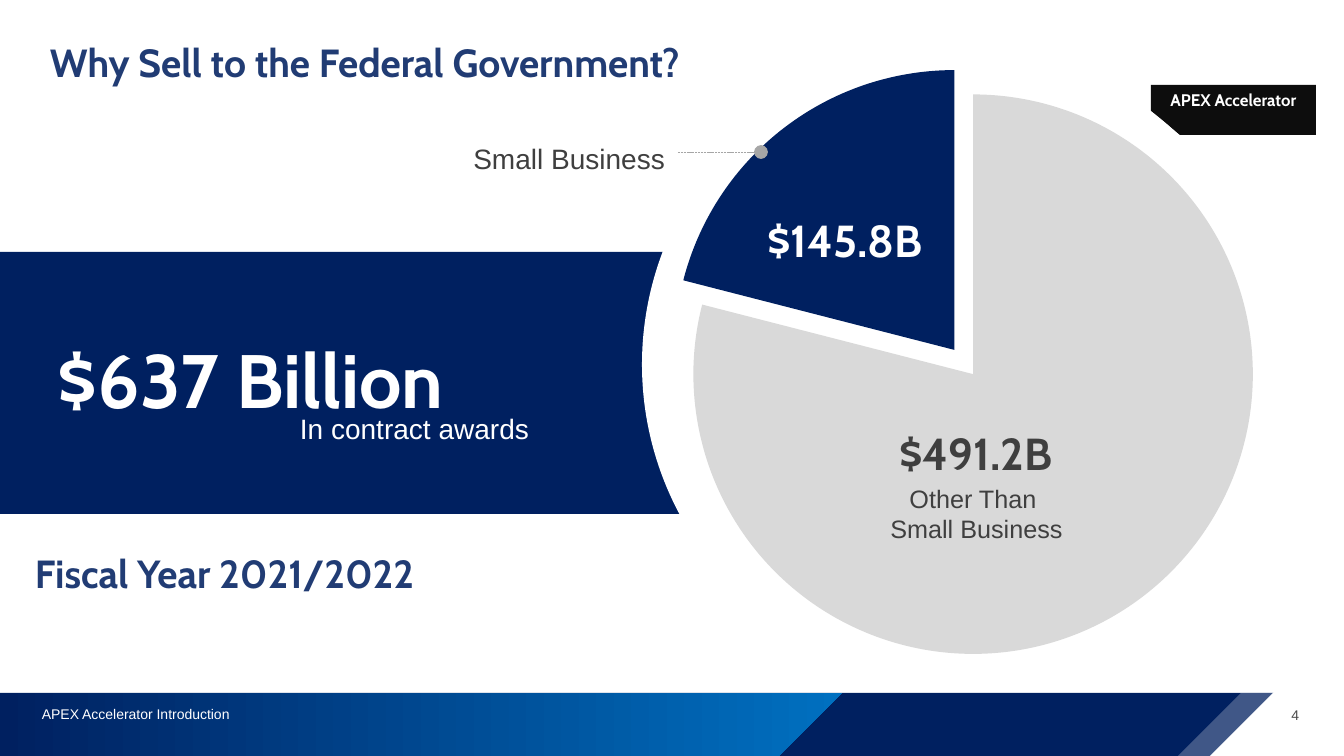
"""Build the federal contract awards slide with its exploded pie chart."""
import lxml.etree
import pptx
import pptx.chart.data
import pptx.dml.color
import pptx.enum.chart
import pptx.enum.dml
import pptx.enum.shapes
import pptx.enum.text
import pptx.oxml
import pptx.oxml.ns
import pptx.util

PX = 914400 / 100.8
COLORS = {"navy": "002060", "blue": "0070C0", "title": "213C74", "white": "FFFFFF",
          "black": "0D0D0D", "light": "D9D9D9", "rule": "A6A6A6", "dark": "3F3F3F",
          "number": "4A4A4A"}
RGB = {name: pptx.dml.color.RGBColor.from_string(c) for name, c in COLORS.items()}
SHAPE = pptx.enum.shapes.MSO_SHAPE
ALIGN = pptx.enum.text.PP_ALIGN
ANCHOR = pptx.enum.text.MSO_ANCHOR
qn = pptx.oxml.ns.qn

prs = pptx.Presentation()
prs.slide_width = round(1344 * PX)
prs.slide_height = round(756 * PX)
s = prs.slides.add_slide(prs.slide_layouts[6])


def add_filled(outline, color):
    """Add a preset (kind, x, y, w, h) or a polygon given as a list of points."""
    if isinstance(outline, list):
        fb = s.shapes.build_freeform(*outline[0], scale=PX)
        fb.add_line_segments(outline[1:], close=True)
        sp = fb.convert_to_shape()
    else:
        sp = s.shapes.add_shape(outline[0], *(round(v * PX) for v in outline[1:]))
    sp.shadow.inherit = False
    sp.fill.solid()
    sp.fill.fore_color.rgb = RGB[color]
    sp.line.fill.background()
    return sp


def add_text(text, box, size, color, font="Arial", align=ALIGN.LEFT,
             anchor=ANCHOR.TOP, spacing=1.0):
    """Add a text box; Cabin text is bold."""
    tf = s.shapes.add_textbox(*(round(v * PX) for v in box)).text_frame
    tf.word_wrap = True
    tf.vertical_anchor = anchor
    tf.text = text
    for p in tf.paragraphs:
        p.alignment = align
        p.line_spacing = spacing
        for r in p.runs:
            r.font.size = pptx.util.Pt(size)
            r.font.name = font
            r.font.bold = font == "Cabin"
            r.font.color.rgb = RGB[color]


add_filled([(1151, 85), (1316, 85), (1316, 135), (1180, 135), (1151, 111)], "black")
add_text("APEX Accelerator", (1151, 85, 165, 50), 12, "white", "Cabin", ALIGN.CENTER)

add_filled((SHAPE.RECTANGLE, 0, 693, 1344, 63), "navy")
add_filled([(1344, 622), (1344, 756), (1210, 756)], "white")
footer = add_filled([(0, 693), (842, 693), (779, 756), (0, 756)], "navy")
footer.fill.gradient()
footer.fill.gradient_angle = 0
for stop, color in zip(footer.fill.gradient_stops, ("navy", "blue")):
    stop.color.rgb = RGB[color]
stripe = add_filled([(1241, 693), (1273, 693), (1210, 756), (1178, 756)], "white")
srgb = stripe.fill._xPr.find(".//" + qn("a:srgbClr"))
lxml.etree.SubElement(srgb, qn("a:alpha"), val="25000")
add_text("4", (1247, 695, 62, 40), 10, "number", align=ALIGN.RIGHT, anchor=ANCHOR.MIDDLE)
add_text("APEX Accelerator Introduction", (32, 698, 774, 30), 10, "white",
         anchor=ANCHOR.BOTTOM, spacing=0.9)

add_text("Why Sell to the Federal Government?", (40, 36, 1263, 57), 28, "title", "Cabin",
         anchor=ANCHOR.MIDDLE, spacing=0.9)
add_filled((SHAPE.RECTANGLE, 0, 252, 1150, 262), "navy")
add_filled((SHAPE.OVAL, 642, 47, 635, 635), "white")

data = pptx.chart.data.CategoryChartData()
data.categories = ["1", "2"]
data.add_series("Series 1", (79, 21))
chart = s.shapes.add_chart(pptx.enum.chart.XL_CHART_TYPE.PIE,
                           *(round(v * PX) for v in (420, 65, 1079, 589)), data).chart
chart.has_legend = False
chart.has_title = False
chart.font.size = pptx.util.Pt(10)
chart.font.name = "Arial"
plot = chart.plots[0]
plot.vary_by_categories = False
for i, (color, explosion) in enumerate((("light", 8), ("navy", 3))):
    fmt = plot.series[0].points[i].format
    fmt.fill.solid()
    fmt.fill.fore_color.rgb = RGB[color]
    fmt.line.fill.background()
for dpt, explosion in zip(chart._chartSpace.iter(qn("c:dPt")), (8, 3)):
    el = pptx.oxml.parse_xml(
        f'<c:explosion {pptx.oxml.ns.nsdecls("c")} val="{explosion}"/>')
    dpt.find(qn("c:spPr")).addprevious(el)
area = chart._chartSpace.find(".//" + qn("c:plotArea"))
for old in area.findall(qn("c:layout")):
    area.remove(old)
layout = lxml.etree.Element(qn("c:layout"))
manual = lxml.etree.SubElement(layout, qn("c:manualLayout"))
for tag, val in (("layoutTarget", "inner"), ("xMode", "edge"), ("yMode", "edge"),
                 ("x", "0.24"), ("y", "0.02"), ("w", "0.52"), ("h", "0.95")):
    lxml.etree.SubElement(manual, qn("c:" + tag), val=val)
area.insert(0, layout)

add_text("$637 Billion", (48, 305, 608, 112), 54, "white", "Cabin", spacing=1.25)
add_text("In contract awards", (290, 398, 303, 47), 20, "white", spacing=1.25)
add_text("$491.2B", (860, 407, 232, 71), 32, "dark", "Cabin", ALIGN.CENTER, spacing=1.25)
add_text("Other Than \nSmall Business", (844, 478, 265, 72), 18, "dark", align=ALIGN.CENTER)
add_text("$145.8B", (739, 194, 212, 71), 32, "white", "Cabin", ALIGN.CENTER, spacing=1.25)

leader = s.shapes.add_connector(pptx.enum.shapes.MSO_CONNECTOR.STRAIGHT,
                                *(round(v * PX) for v in (678, 152, 761, 152)))
leader.line.color.rgb = RGB["rule"]
leader.line.width = pptx.util.Pt(0.5)
leader.line.dash_style = pptx.enum.dml.MSO_LINE.SQUARE_DOT
lxml.etree.SubElement(leader.line._get_or_add_ln(), qn("a:tailEnd"),
                      type="oval", w="lg", len="lg")
lxml.etree.SubElement(leader._element.spPr, qn("a:effectLst"))

add_text("Fiscal Year 2021/2022", (25, 547, 1263, 57), 28, "title", "Cabin",
         anchor=ANCHOR.MIDDLE, spacing=0.9)
add_text("Small Business", (436, 128, 239, 48), 20, "dark", align=ALIGN.RIGHT, spacing=1.25)

prs.save("out.pptx")
